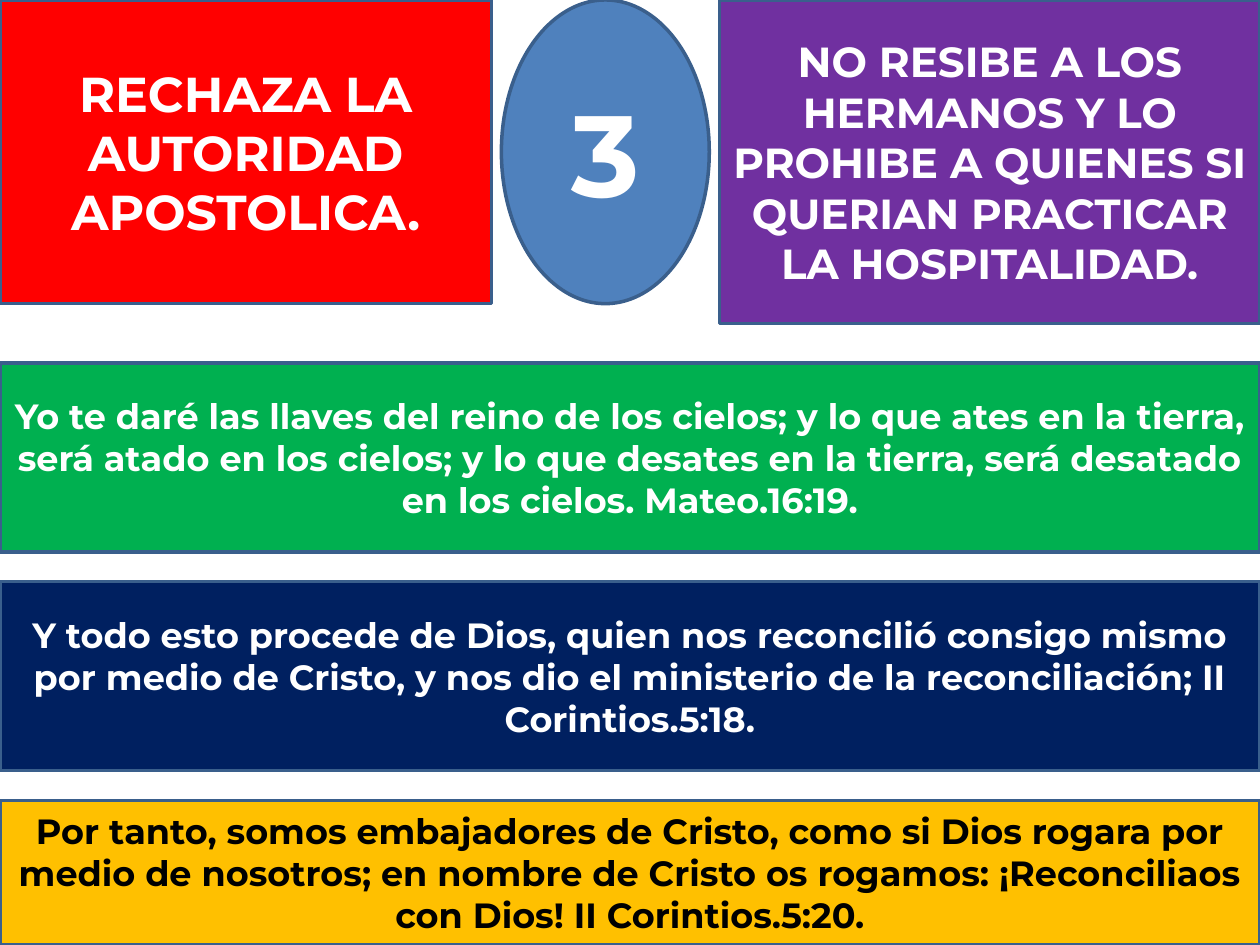
from pptx import Presentation
from pptx.dml.color import RGBColor
from pptx.enum.shapes import MSO_SHAPE
from pptx.enum.text import MSO_ANCHOR, PP_ALIGN
from pptx.util import Pt

RECT, OVAL = MSO_SHAPE.RECTANGLE, MSO_SHAPE.OVAL
MIDDLE, CENTER = MSO_ANCHOR.MIDDLE, PP_ALIGN.CENTER

WHITE = RGBColor(0xFF, 0xFF, 0xFF)
BLACK = RGBColor(0x00, 0x00, 0x00)
RED = RGBColor(0xFF, 0x00, 0x00)
BLUE = RGBColor(0x4F, 0x81, 0xBD)
PURPLE = RGBColor(0x70, 0x30, 0xA0)
GREEN = RGBColor(0x00, 0xB0, 0x50)
NAVY = RGBColor(0x00, 0x20, 0x60)
GOLD = RGBColor(0xFF, 0xC0, 0x00)
EDGE = RGBColor(0x3A, 0x5F, 0x8C)

FONT = "Montserrat"
WIDTH, HEIGHT = 720, 540

VERSES = [
    ("Yo te daré las llaves del reino de los cielos; y lo que ates en la tierra, "
     "será atado en los cielos; y lo que desates en la tierra, será desatado "
     "en los cielos. Mateo.16:19.", GREEN, WHITE, 108),
    ("Y todo esto procede de Dios, quien nos reconcilió consigo mismo por medio "
     "de Cristo, y nos dio el ministerio de la reconciliación; "
     "II Corintios.5:18.", NAVY, WHITE, 108),
    ("Por tanto, somos embajadores de Cristo, como si Dios rogara por medio de "
     "nosotros; en nombre de Cristo os rogamos: ¡Reconciliaos con Dios! "
     "II Corintios.5:20.", GOLD, BLACK, 82.6),
]


def add_panel(slide, kind, box, text, size, fill, ink=WHITE):
    """Draw an outlined shape with bold centred text."""
    shape = slide.shapes.add_shape(kind, *map(Pt, box))
    shape.shadow.inherit = False
    shape.fill.solid()
    shape.fill.fore_color.rgb = fill
    shape.line.color.rgb = EDGE
    shape.line.width = Pt(2)
    frame = shape.text_frame
    frame.word_wrap = True
    frame.vertical_anchor = MIDDLE
    para = frame.paragraphs[0]
    para.text = text
    para.alignment = CENTER
    para.font.name = FONT
    para.font.size = Pt(size)
    para.font.bold = True
    para.font.color.rgb = ink


def add_header(slide, left, top, width, height):
    """Place the two statements with the number between them."""
    low = height - 11.5
    add_panel(slide, RECT, (left, top, 280.8, low),
              "RECHAZA LA AUTORIDAD APOSTOLICA.", 28, RED)
    add_panel(slide, OVAL, (left + 286.5, top, 118.8, low), "3", 66, BLUE)
    add_panel(slide, RECT, (left + 411.1, top, width - 411.1, height),
              "NO RESIBE A LOS HERMANOS Y LO PROHIBE A QUIENES SI "
              "QUERIAN PRACTICAR LA HOSPITALIDAD.", 24, PURPLE)


def add_verses(slide, left, top, width, height):
    """Stack the verse bands with equal gaps over the given height."""
    gap = (height - sum(verse[3] for verse in VERSES)) / (len(VERSES) - 1)
    for text, fill, ink, tall in VERSES:
        add_panel(slide, RECT, (left, top, width, tall), text, 20, fill, ink)
        top += tall + gap


def main():
    """Build and save the slide."""
    deck = Presentation()
    deck.slide_width, deck.slide_height = Pt(WIDTH), Pt(HEIGHT)
    slide = deck.slides.add_slide(deck.slide_layouts[6])
    add_header(slide, 0, 0, WIDTH, 185)
    add_verses(slide, 0, 207.4, WIDTH, HEIGHT - 207.4)
    deck.save("out.pptx")


if __name__ == "__main__":
    main()
